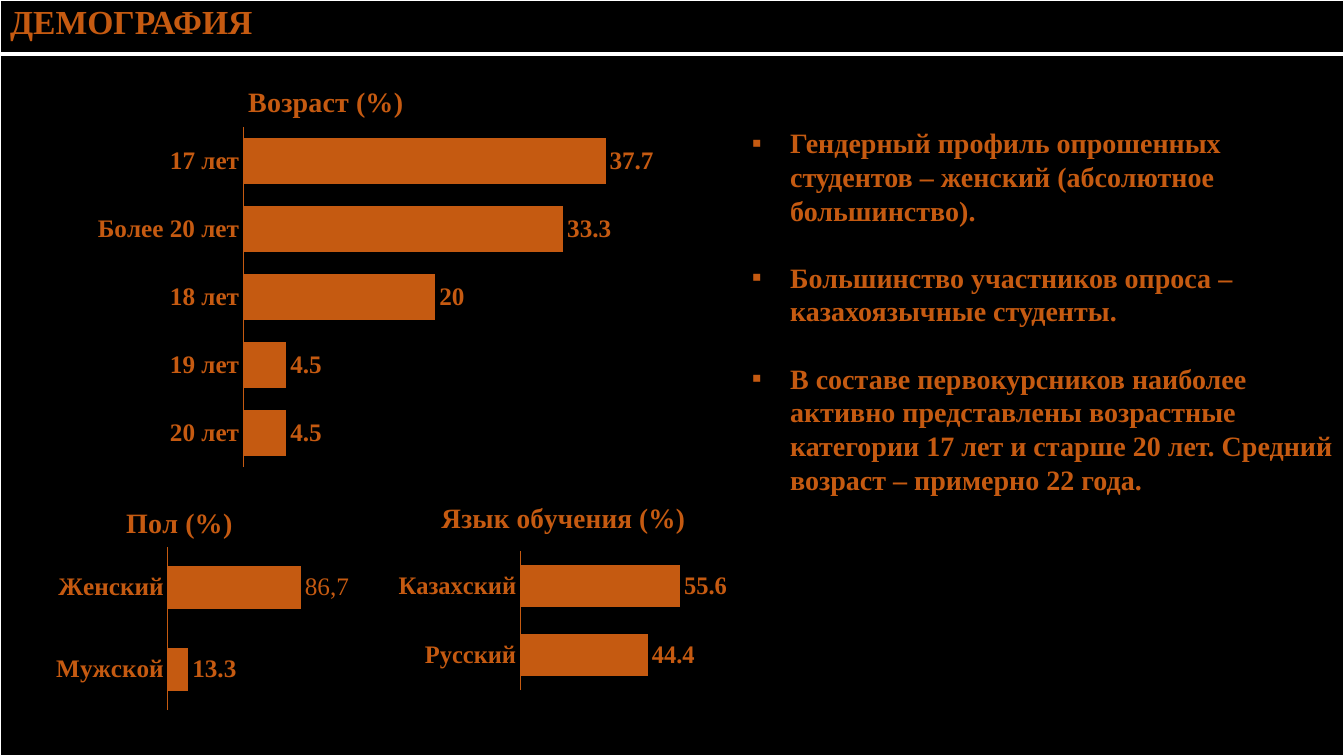
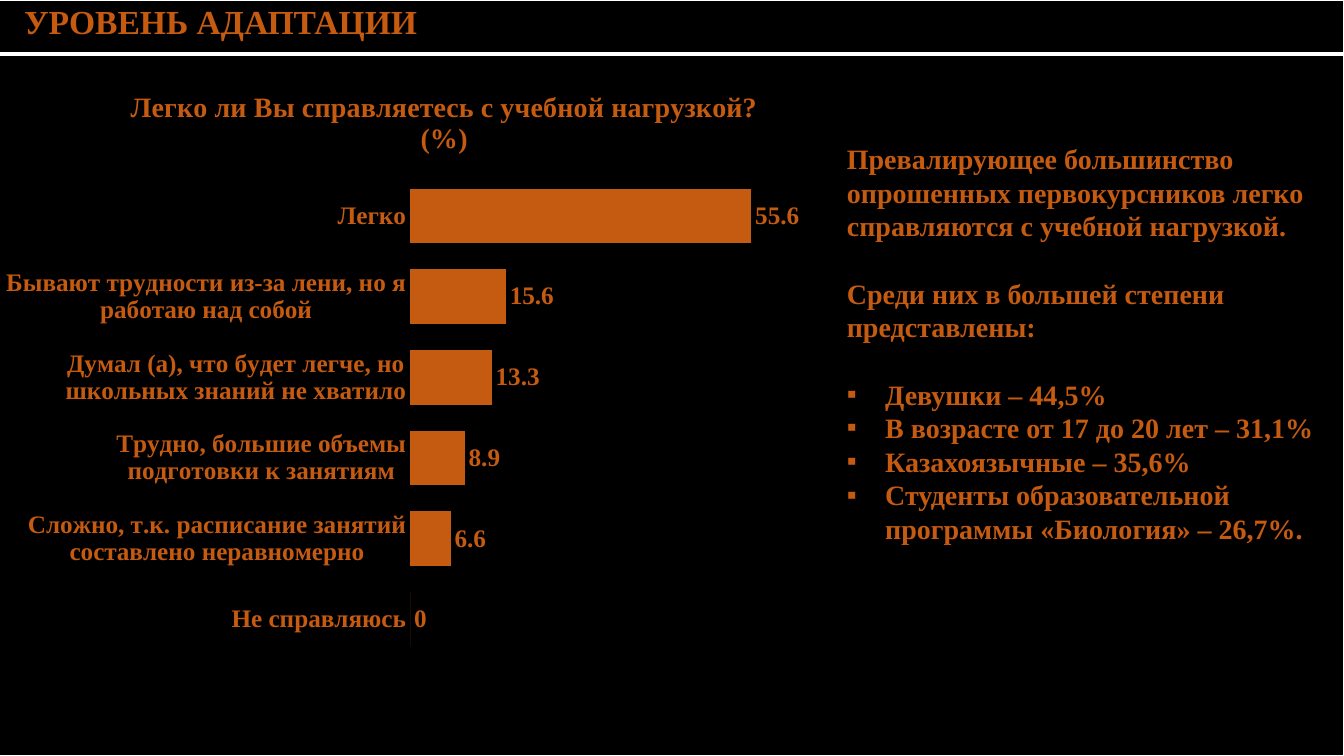
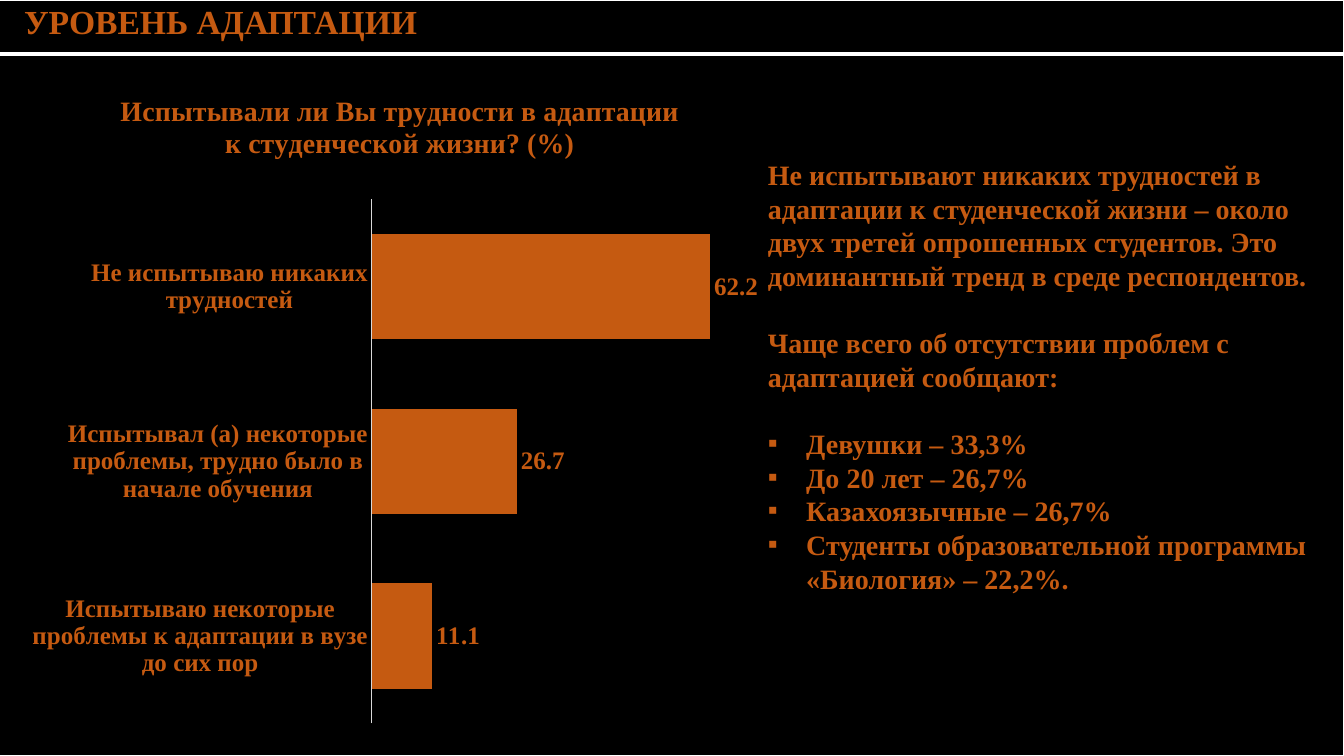
import pptx
import pptx.chart.data
import pptx.dml.color
import pptx.enum.chart
import pptx.oxml
import pptx.oxml.ns
import pptx.util
import lxml.etree

COLORS = {"accent": "C55A11", "background": "000000", "line": "FFFFFF", "axis": "D9D9D9"}
FONT = "Times New Roman"
HEADER_SHARE = 0.071
LINE_PITCH = pptx.util.Pt(24)
BULLET_INDENT = pptx.util.Inches(0.38)

presentation = pptx.Presentation()
presentation.slide_width = pptx.util.Inches(13.33)
presentation.slide_height = pptx.util.Inches(7.5)
WIDTH, HEIGHT = presentation.slide_width, presentation.slide_height
qn = pptx.oxml.ns.qn


def rgb(name):
    return pptx.dml.color.RGBColor.from_string(COLORS[name])


def style_font(font, size, bold=True):
    font.name = FONT
    font.size = pptx.util.Pt(size)
    font.bold = bold
    font.color.rgb = rgb("accent")


# Boxes are left, top, width, height in percent of the slide.
# Chart title and plot positions are shares of the chart.
# Text lines: style "bullet" or "plain", whether a blank gap follows, wording.
SLIDES = [
    {
        "title": "ДЕМОГРАФИЯ", "table_left": 0, "title_margin": 0.1,
        "charts": [
            {"title": "Язык обучения (%)", "box": (28.5, 65.2, 25.6, 30.7),
             "title_at": (0.16, 0.01), "plot": (0.41, 0.25, 0.56, 0.6),
             "gap": 66, "maximum": 65, "axis": "accent",
             "data": {"Русский": 44.4, "Казахский": 55.6}},
            {"title": "Пол (%)", "box": (1.8, 65.2, 26.7, 32.3),
             "title_at": (0.27, 0.03), "plot": (0.4, 0.22, 0.39, 0.67),
             "gap": 90, "maximum": 90, "axis": "accent",
             "data": {"Мужской": 13.3, "Женский": 85.7},
             "custom_labels": {1: "86,7"}},
            {"title": "Возраст (%)", "box": (-4.05, 10.4, 54, 58.4),
             "title_at": (0.41, 0), "plot": (0.41, 0.11, 0.53, 0.77),
             "gap": 48, "maximum": 40, "axis": "accent",
             "data": {"20 лет": 4.5, "19 лет": 4.5, "18 лет": 20,
                      "Более 20 лет": 33.3, "17 лет": 37.7}},
        ],
        "text_box": (55.2, 16, 44.8, 50.7),
        "text": [
            ("bullet", True, "Гендерный профиль опрошенных студентов – женский "
             "(абсолютное большинство)."),
            ("bullet", True, "Большинство участников опроса – казахоязычные студенты."),
            ("bullet", False, "В составе первокурсников наиболее активно представлены "
             "возрастные категории 17 лет и старше 20 лет. Средний возраст – примерно 22 года."),
        ],
    },
    {
        "title": "УРОВЕНЬ АДАПТАЦИИ", "table_left": -1.13, "title_margin": 0.39,
        "charts": [
            {"title": "Легко ли Вы справляетесь с учебной нагрузкой? (%)",
             "box": (0, 11.07, 62.27, 86.93),
             "title_at": (0.15, 0), "plot": (0.49, 0.14, 0.44, 0.86),
             "gap": 48, "maximum": 60, "axis": "background",
             "data": {"": None, "Не справляюсь": 0,
                      "Сложно, т.к. расписание занятий составлено неравномерно": 6.6,
                      "Трудно, большие объемы подготовки к занятиям": 8.9,
                      "Думал (а), что будет легче, но школьных знаний не хватило": 13.3,
                      "Бывают трудности из-за лени, но я работаю над собой": 15.6,
                      "Легко": 55.6}},
        ],
        "text_box": (62.27, 18.1, 37.73, 60),
        "text": [
            ("plain", True, "Превалирующее большинство опрошенных первокурсников легко "
             "справляются с учебной нагрузкой."),
            ("plain", True, "Среди них в большей степени представлены:"),
            ("bullet", False, "Девушки – 44,5%"),
            ("bullet", False, "В возрасте от 17 до 20 лет – 31,1%"),
            ("bullet", False, "Казахоязычные – 35,6%"),
            ("bullet", False, "Студенты образовательной программы «Биология» – 26,7%."),
        ],
    },
    {
        "title": "УРОВЕНЬ АДАПТАЦИИ", "table_left": -1.13, "title_margin": 0.39,
        "charts": [
            {"title": "Испытывали ли Вы трудности в адаптации к студенческой жизни? (%)",
             "box": (1.5, 9.07, 54.9, 86.67),
             "title_at": (0.13, 0.03), "plot": (0.48, 0.2, 0.52, 0.8),
             "gap": 66, "maximum": 70, "axis": "axis",
             "data": {"Испытываю некоторые проблемы к адаптации в вузе до сих пор": 11.1,
                      "Испытывал (а) некоторые проблемы, трудно было в начале обучения": 26.7,
                      "Не испытываю никаких трудностей": 62.2}},
        ],
        "text_box": (56.4, 20.2, 43.6, 60),
        "text": [
            ("plain", True, "Не испытывают никаких трудностей в адаптации к студенческой "
             "жизни – около двух третей опрошенных студентов. Это доминантный тренд "
             "в среде респондентов."),
            ("plain", True, "Чаще всего об отсутствии проблем с адаптацией сообщают:"),
            ("bullet", False, "Девушки – 33,3%"),
            ("bullet", False, "До 20 лет – 26,7%"),
            ("bullet", False, "Казахоязычные – 26,7%"),
            ("bullet", False, "Студенты образовательной программы «Биология» – 22,2%."),
        ],
    },
]

for content in SLIDES:
    slide = presentation.slides.add_slide(presentation.slide_layouts[6])

    # Black background table with the title row
    left = int(WIDTH * content["table_left"] / 100)
    table = slide.shapes.add_table(2, 1, left, 0, WIDTH - left, HEIGHT).table
    table.rows[0].height = int(HEIGHT * HEADER_SHARE)
    table.rows[1].height = HEIGHT - table.rows[0].height
    header, body = table.cell(0, 0), table.cell(1, 0)
    header.text = content["title"]
    header.margin_left = pptx.util.Inches(content["title_margin"])
    style_font(header.text_frame.paragraphs[0].font, 24)
    for cell, edges in ((header, {"lnL": 1, "lnR": 1, "lnT": 1, "lnB": 3}),
                        (body, {"lnL": 1, "lnR": 1, "lnB": 1})):
        cell.fill.solid()
        cell.fill.fore_color.rgb = rgb("background")
        properties = cell._tc.get_or_add_tcPr()
        for position, (edge, points) in enumerate(edges.items()):
            border = lxml.etree.Element(qn("a:" + edge), w=str(pptx.util.Pt(points)))
            fill = lxml.etree.SubElement(border, qn("a:solidFill"))
            lxml.etree.SubElement(fill, qn("a:srgbClr"), val=COLORS["line"])
            properties.insert(position, border)

    for item in content["charts"]:
        chart_left, chart_width = (int(WIDTH * share / 100) for share in item["box"][::2])
        chart_top, chart_height = (int(HEIGHT * share / 100) for share in item["box"][1::2])
        chart_data = pptx.chart.data.CategoryChartData()
        chart_data.categories = list(item["data"])
        chart_data.add_series("%", list(item["data"].values()))
        chart = slide.shapes.add_chart(
            pptx.enum.chart.XL_CHART_TYPE.BAR_CLUSTERED,
            chart_left, chart_top, chart_width, chart_height, chart_data).chart
        chart.has_legend = False
        chart.font.name = "Calibri"
        chart.font.size = pptx.util.Pt(10)
        chart.has_title = True
        title_frame = chart.chart_title.text_frame
        title_frame.text = item["title"]
        style_font(title_frame.paragraphs[0].font, 20)

        category_axis = chart.category_axis
        category_axis.major_tick_mark = pptx.enum.chart.XL_TICK_MARK.NONE
        category_axis.format.line.color.rgb = rgb(item["axis"])
        category_axis.format.line.width = pptx.util.Pt(0.75)
        style_font(category_axis.tick_labels.font, 18)
        value_axis = chart.value_axis
        value_axis.minimum_scale = 0
        value_axis.maximum_scale = item["maximum"]
        value_axis.has_major_gridlines = False
        value_axis.visible = False

        plot = chart.plots[0]
        plot.gap_width = item["gap"]
        plot.vary_by_categories = False
        series = plot.series[0]
        series.format.fill.solid()
        series.format.fill.fore_color.rgb = rgb("accent")
        labels = series.data_labels
        labels.show_value = True
        labels.position = pptx.enum.chart.XL_LABEL_POSITION.OUTSIDE_END
        style_font(labels.font, 18)
        for index, wording in item.get("custom_labels", {}).items():
            label = series.points[index].data_label
            run = label.text_frame.paragraphs[0].add_run()
            run.text = wording
            style_font(run.font, 18, bold=False)
            label.position = pptx.enum.chart.XL_LABEL_POSITION.OUTSIDE_END

        # Manual places of the title and of the inner plot area
        for parent, shares in ((chart.chart_title._element, item["title_at"]),
                               (chart._chartSpace.chart.plotArea, item["plot"])):
            for old_layout in parent.findall(qn("c:layout")):
                parent.remove(old_layout)
            layout = lxml.etree.Element(qn("c:layout"))
            parent.insert(0 if parent.find(qn("c:tx")) is None else 1, layout)
            manual = lxml.etree.SubElement(layout, qn("c:manualLayout"))
            settings = [("xMode", "edge"), ("yMode", "edge"), *zip("xywh", shares)]
            if len(shares) == 4:
                settings.insert(0, ("layoutTarget", "inner"))
            for tag, value in settings:
                lxml.etree.SubElement(manual, qn("c:" + tag), val=str(value))

    # Findings beside the charts
    text_left, text_width = (int(WIDTH * share / 100) for share in content["text_box"][::2])
    text_top, text_height = (int(HEIGHT * share / 100) for share in content["text_box"][1::2])
    text_frame = slide.shapes.add_textbox(text_left, text_top, text_width, text_height).text_frame
    text_frame.word_wrap = True
    for index, (style, gap_after, wording) in enumerate(content["text"]):
        paragraph = text_frame.add_paragraph() if index else text_frame.paragraphs[0]
        paragraph.text = wording
        if style == "bullet":
            properties = paragraph._p.get_or_add_pPr()
            properties.set("marL", str(BULLET_INDENT))
            properties.set("indent", str(-BULLET_INDENT))
            lxml.etree.SubElement(properties, qn("a:buFont"), typeface=FONT)
            lxml.etree.SubElement(properties, qn("a:buChar"), char="▪")
        paragraph.line_spacing = LINE_PITCH
        paragraph.space_after = LINE_PITCH if gap_after else 0
        style_font(paragraph.font, 20)

presentation.save("out.pptx")
